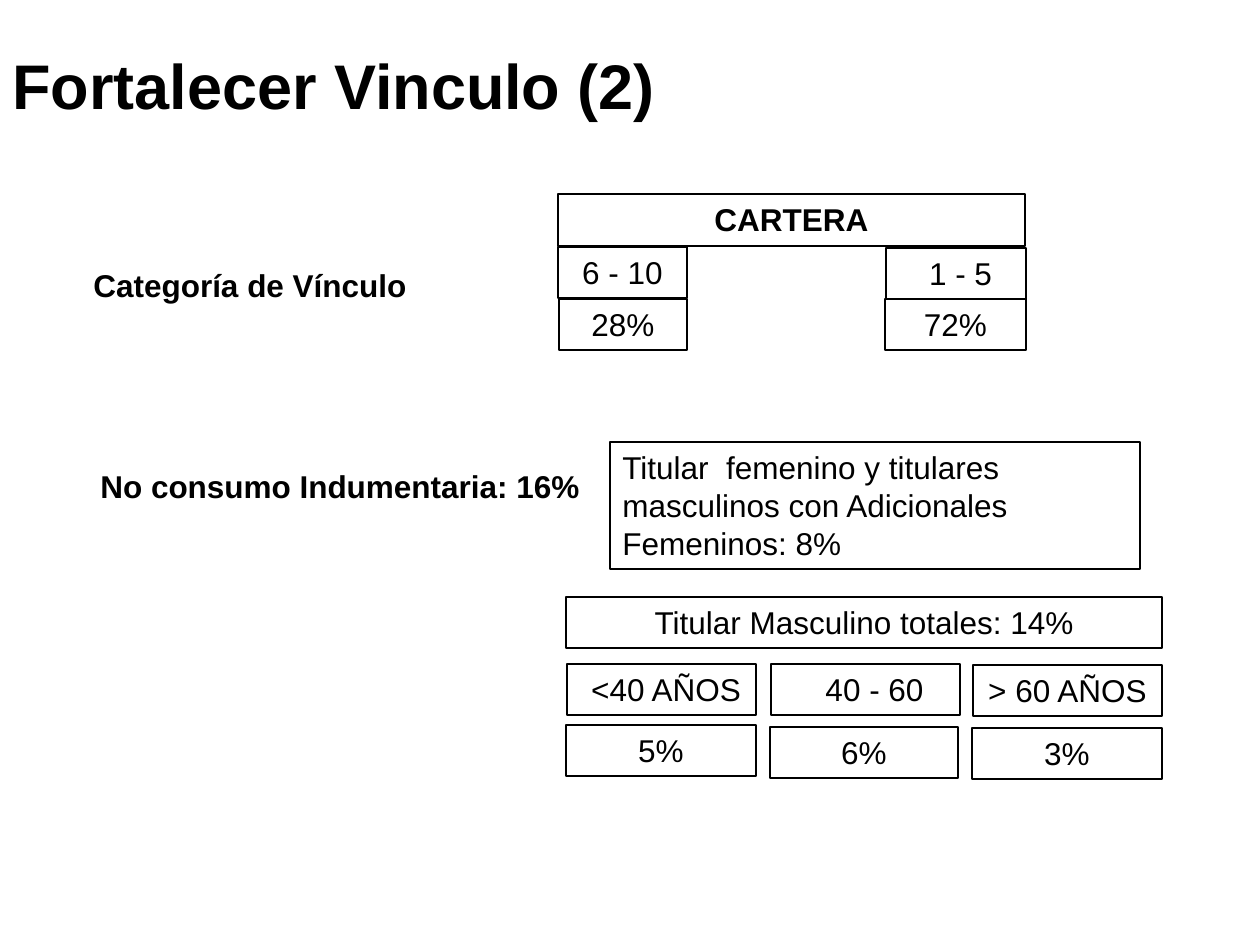
from pptx import Presentation
from pptx import util as u
from pptx.dml.color import RGBColor
from pptx.enum import shapes, text

PX = u.Inches(1) / 126
INK = {"text": "000000", "line": "000000"}
FONT = "Arial"
PAD, SPACE = 12.6, 9  # side inset, and the nudge of some centred labels
THIN, THICK = 0.75, 1.5
LEFT, MID = text.PP_ALIGN.LEFT, text.PP_ALIGN.CENTER

# Plain text: words, left, top, width, height, size, wraps
LABELS = [
    ("Fortalecer Vinculo (2)", 0, 38, 1086, 93, 36, True),
    ("Categoría de Vínculo", 81, 260, 339, 50, 18, False),
    ("No consumo Indumentaria: 16%", 88, 461, 505, 50, 18, False),
]

# Portfolio: heading over two columns of range and share
HEAD = ("CARTERA", 558, 194, 467, 52)
RANGES = [
    # range, nudge, left, top, width; share, left, width
    (("6 - 10", 0, 558, 247, 129), ("28%", 559, 128)),
    (("1 - 5", SPACE, 886, 248, 140), ("72%", 885, 141)),
]
SHARE_TOP = 299

# Clothing: women, then men split by age
WOMEN = ["Titular  femenino y titulares masculinos con Adicionales",
         "Femeninos: 8%"]
MEN = "Titular Masculino totales: 14%"
AGES = [
    # age, nudge, left, top; share, top, width
    (("<40 AÑOS", SPACE, 567, 664), ("5%", 725, 190)),
    (("40 - 60", 2 * SPACE, 771, 664), ("6%", 727, 188)),
    (("> 60 AÑOS", 0, 973, 665), ("3%", 728, 190)),
]
AGE_W, ROW_H = 189, 51

deck = Presentation()
deck.slide_width, deck.slide_height = u.Inches(10), u.Inches(7.5)
slide = deck.slides.add_slide(deck.slide_layouts[6])


def px(*vals):
    return [round(v * PX) for v in vals]


def write(shape, lines, size=18, bold=False, align=LEFT, nudge=0):
    frame = shape.text_frame
    frame.word_wrap = True
    frame.margin_left, frame.margin_right = px(PAD + nudge, PAD)
    frame.text = "\n".join(lines)
    for para in frame.paragraphs:
        para.alignment = align
        font = para.font
        font.name, font.size, font.bold = FONT, u.Pt(size), bold
        font.color.rgb = RGBColor.from_string(INK["text"])
    return frame


def box(lines, x, y, w, h=ROW_H, line=THIN, **style):
    shape = slide.shapes.add_shape(
        shapes.MSO_SHAPE.RECTANGLE, *px(x, y, w, h))
    shape.shadow.inherit = False
    shape.fill.background()
    shape.line.color.rgb = RGBColor.from_string(INK["line"])
    shape.line.width = u.Pt(line)
    frame = write(shape, lines, **style)
    frame.vertical_anchor = text.MSO_ANCHOR.TOP


# Title and side labels
for words, x, y, w, h, size, wrap in LABELS:
    area = slide.shapes.add_textbox(*px(x, y, w, h))
    frame = write(area, [words], size, bold=True)
    frame.word_wrap = wrap
    if wrap:
        frame.vertical_anchor = text.MSO_ANCHOR.MIDDLE

# Portfolio block
for (span, nudge, x, y, w), (share, left, wide) in RANGES:
    box([span], x, y, w, align=MID, nudge=nudge)
    box([share], left, SHARE_TOP, wide, align=MID)
box([HEAD[0]], *HEAD[1:], bold=True, align=MID)

# Clothing block
box(WOMEN, 610, 442, 530, 127, line=THICK)
box([MEN], 566, 597, 596, line=THICK, align=MID)
for (age, nudge, x, y), (share, top, wide) in AGES:
    box([age], x, y, AGE_W, line=THICK, align=MID, nudge=nudge)
    box([share], x - 1, top, wide, align=MID)

deck.save("out.pptx")
